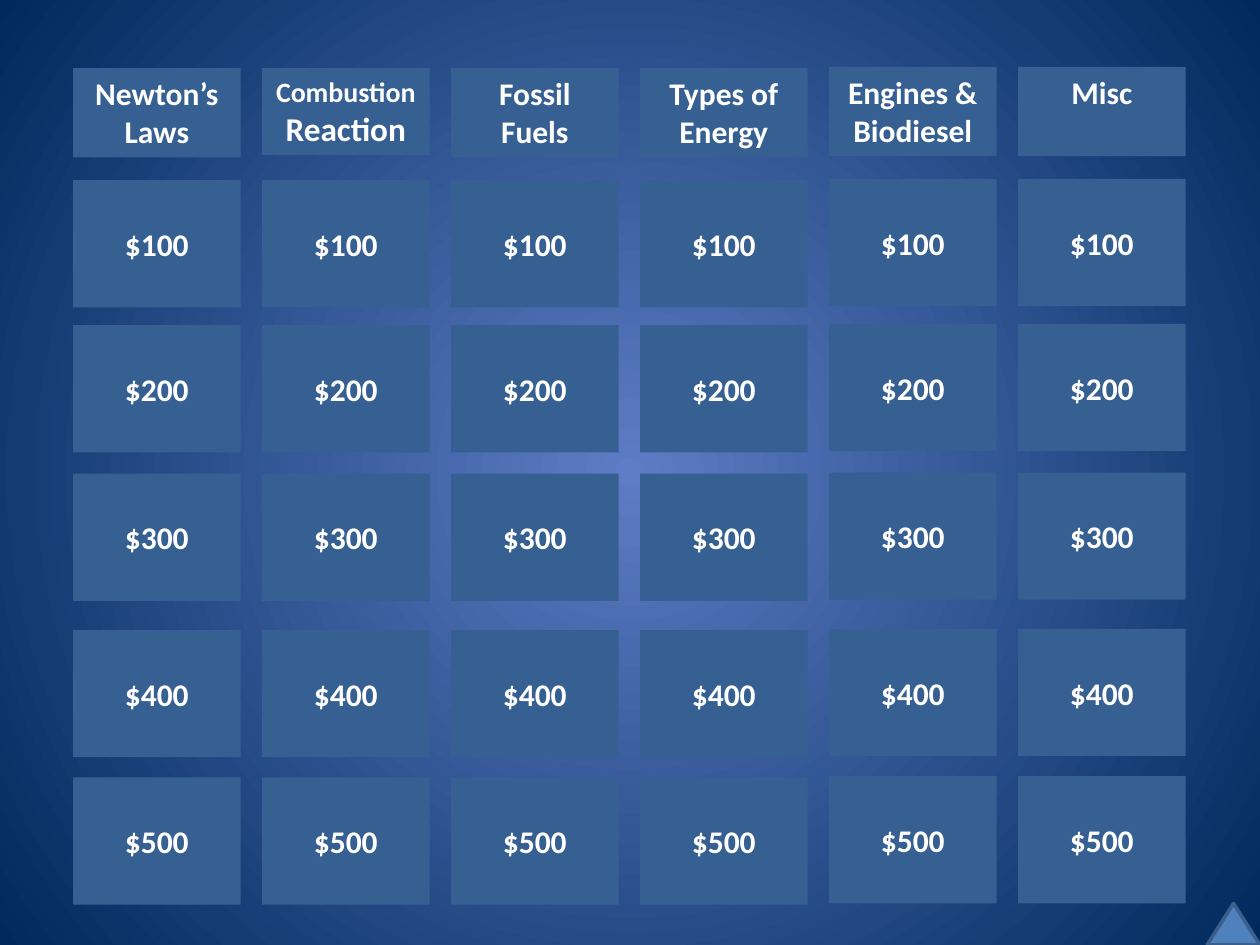
from lxml import etree
from pptx import Presentation
from pptx.dml.color import RGBColor
from pptx.enum.shapes import MSO_SHAPE
from pptx.enum.text import MSO_ANCHOR, PP_ALIGN
from pptx.oxml.ns import qn
from pptx.util import Inches, Pt

GLOW = RGBColor(0x5E, 0x7C, 0xC5)
NAVY = RGBColor(0x00, 0x29, 0x5C)
TILE = RGBColor(0x37, 0x60, 0x92)
ARROW = RGBColor(0x4F, 0x81, 0xBD)
ARROW_EDGE = RGBColor(0x3A, 0x5F, 0x8C)
WHITE = RGBColor(0xFF, 0xFF, 0xFF)

COLUMN_LEFT, COLUMN_STEP, TILE_WIDTH = 0.58, 1.5, 1.33
HEADER_TOP, HEADER_HEIGHT, TILE_HEIGHT = 0.54, 0.71, 1.01
COLUMN_RISE = [0, 0, 0, 0, 0.01, 0.01]

CATEGORIES = [
    [("Newton’s Laws", 18)],
    [("Combustion ", 16), ("Reaction", 19)],
    [("Fossil Fuels", 18)],
    [("Types of Energy", 18)],
    [("Engines & Biodiesel", 18)],
    [("Misc", 18)],
]
PRIZE_ROWS = [("$100", 1.43), ("$200", 2.58), ("$300", 3.76), ("$400", 5), ("$500", 6.17)]

presentation = Presentation()
presentation.slide_width = Inches(10)
presentation.slide_height = Inches(7.5)
slide = presentation.slides.add_slide(presentation.slide_layouts[6])

background = slide.background.fill
background.gradient()
for stop, color, position in zip(background.gradient_stops, (GLOW, NAVY), (0, 1)):
    stop.color.rgb = color
    stop.position = position
gradient = next(slide.element.iter(qn("a:gradFill")))
gradient.remove(gradient.find(qn("a:lin")))
circle = etree.Element(qn("a:path"), path="circle")
etree.SubElement(circle, qn("a:fillToRect"), l="50000", t="50000", r="50000", b="50000")
gradient.find(qn("a:gsLst")).addnext(circle)


def add_tile(column, top, height, runs, anchor):
    tile = slide.shapes.add_shape(
        MSO_SHAPE.RECTANGLE,
        Inches(COLUMN_LEFT + column * COLUMN_STEP),
        Inches(top - COLUMN_RISE[column]),
        Inches(TILE_WIDTH),
        Inches(height),
    )
    tile.shadow.inherit = False
    tile.fill.solid()
    tile.fill.fore_color.rgb = TILE
    tile.line.fill.background()
    text_frame = tile.text_frame
    text_frame.word_wrap = True
    text_frame.vertical_anchor = anchor
    paragraph = text_frame.paragraphs[0]
    paragraph.alignment = PP_ALIGN.CENTER
    for text, size in runs:
        run = paragraph.add_run()
        run.text = text
        run.font.name = "Calibri"
        run.font.size = Pt(size)
        run.font.bold = True
        run.font.color.rgb = WHITE


for prize, top in PRIZE_ROWS:
    for column in range(len(CATEGORIES)):
        add_tile(column, top, TILE_HEIGHT, [(prize, 18)], MSO_ANCHOR.MIDDLE)

for column, runs in enumerate(CATEGORIES):
    height = 0.69 if len(runs) > 1 else HEADER_HEIGHT
    add_tile(column, HEADER_TOP, height, runs, MSO_ANCHOR.TOP)

triangle = slide.shapes.add_shape(
    MSO_SHAPE.ISOSCELES_TRIANGLE, Inches(9.58), Inches(7.17), Inches(0.42), Inches(0.33)
)
triangle.shadow.inherit = False
triangle.fill.solid()
triangle.fill.fore_color.rgb = ARROW
triangle.line.color.rgb = ARROW_EDGE
triangle.line.width = Pt(2)

presentation.save("out.pptx")
